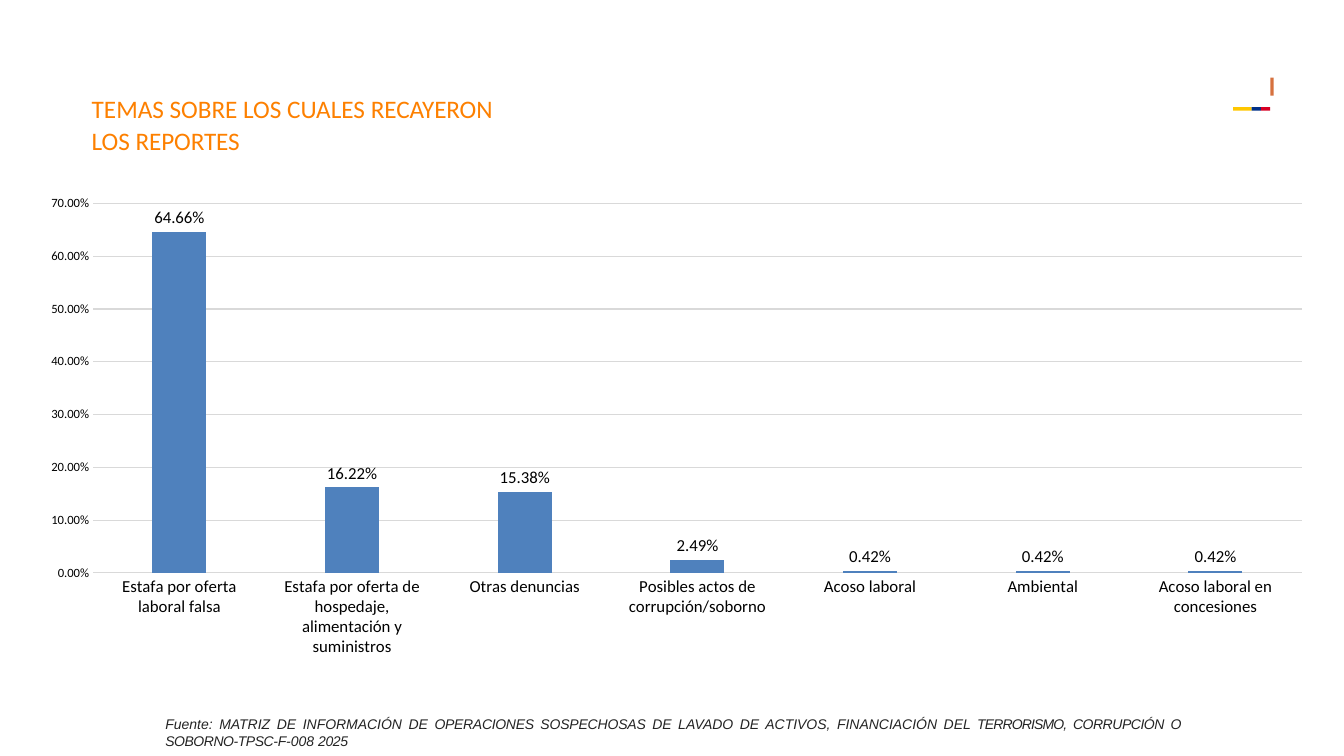
from pptx import Presentation
from pptx.chart.data import CategoryChartData
from pptx.dml.color import RGBColor
from pptx.enum.chart import XL_CHART_TYPE as ChartType, XL_LABEL_POSITION as LabelPos, XL_TICK_MARK as Tick
from pptx.enum.shapes import MSO_SHAPE as Shape
from pptx.enum.text import MSO_AUTO_SIZE as AutoSize, PP_ALIGN as Align
from pptx.util import Inches, Pt

COLORS = {
    "heading": "FD8000", "source": "242424", "text": "000000",
    "bar": "4F81BD", "grid": "D9D9D9", "accent": "D6713E",
    "yellow": "FFC700", "blue": "003088", "red": "D70024",
}


class ReportSlide:
    """Draws on one slide; places and sizes are percentages of the slide."""

    def __init__(self, deck, font="Calibri"):
        self.deck = deck
        self.font = font
        self.slide = deck.slides.add_slide(deck.slide_layouts[6])

    def area(self, left, top, width, height):
        across, down = self.deck.slide_width, self.deck.slide_height
        return [round(share * full / 100) for share, full in
                ((left, across), (top, down), (width, across), (height, down))]

    def color(self, name):
        return RGBColor.from_string(COLORS[name])

    def style(self, font, size, color="text", name=None, italic=None):
        font.name = name or self.font
        font.size = Pt(size)
        font.color.rgb = self.color(color)
        font.italic = italic

    def bar(self, place, color):
        mark = self.slide.shapes.add_shape(Shape.RECTANGLE, *self.area(*place))
        mark.shadow.inherit = False
        mark.fill.solid()
        mark.fill.fore_color.rgb = self.color(color)
        mark.line.fill.background()

    def text(self, place, pieces, align=Align.LEFT, **look):
        """pieces: (wording, letter spacing in hundredths of a point)."""
        frame = self.slide.shapes.add_textbox(*self.area(*place)).text_frame
        frame.word_wrap = True
        frame.auto_size = AutoSize.SHAPE_TO_FIT_TEXT
        frame.margin_left = frame.margin_top = Inches(0.01)
        frame.margin_right = frame.margin_bottom = 0
        line = frame.paragraphs[0]
        line.alignment = align
        for wording, spacing in pieces:
            run = line.add_run()
            run.text = wording
            self.style(run.font, **look)
            if spacing:
                run.font._element.set("spc", str(spacing))

    def column_chart(self, place, shares, number_format="0.00%"):
        data = CategoryChartData(number_format=number_format)
        data.categories = list(shares)
        data.add_series("Series 1", list(shares.values()))
        chart = self.slide.shapes.add_chart(
            ChartType.COLUMN_CLUSTERED, *self.area(*place), data).chart
        chart.has_legend = chart.has_title = False
        self.style(chart.font, 10)

        topics, scale = chart.category_axis, chart.value_axis
        for axis, size in ((topics, 12), (scale, 9)):
            axis.major_tick_mark = axis.minor_tick_mark = Tick.NONE
            self.style(axis.tick_labels.font, size)
        scale.minimum_scale, scale.maximum_scale, scale.major_unit = 0, 0.7, 0.1
        scale.tick_labels.number_format = number_format
        scale.tick_labels.number_format_is_linked = False
        scale.format.line.fill.background()
        for rule in (topics.format.line, scale.major_gridlines.format.line):
            rule.color.rgb = self.color("grid")
            rule.width = Pt(0.75)

        plot = chart.plots[0]
        plot.gap_width, plot.overlap = 219, -27
        plot.vary_by_categories = False
        fill = plot.series[0].format.fill
        fill.solid()
        fill.fore_color.rgb = self.color("bar")
        plot.has_data_labels = True
        labels = plot.data_labels
        labels.show_value = True
        labels.position = LabelPos.OUTSIDE_END
        labels.number_format = number_format
        labels.number_format_is_linked = False
        self.style(labels.font, 12)


def main():
    deck = Presentation()
    deck.slide_width, deck.slide_height = Inches(13.33), Inches(7.5)
    report = ReportSlide(deck)

    # Corner marks: upright accent and three-colour stripe
    report.bar((94.52, 10.27, 0.24, 2.4), "accent")
    stripe_left, stripe_unit = 91.75, 0.69
    for color, units in (("yellow", 2), ("blue", 1), ("red", 1)):
        report.bar((stripe_left, 14.18, units * stripe_unit, 0.46), color)
        stripe_left += units * stripe_unit

    # Source note
    report.text((12.23, 94.53, 75.62, 4.8), [
        ("Fuente: MATRIZ DE INFORMACIÓN DE ", 0), ("OPERACIONES ", -20),
        ("SOSPECHOSAS ", -10), ("DE LAVADO DE ACTIVOS, FINANCIACIÓN DEL ", 0),
        ("TERRORISMO, ", -60), ("CORRUPCIÓN ", -30), ("O ", -50),
        ("SOBORNO-TPSC-", -30), ("F-", -10), ("008 ", 0), ("2025", -20),
    ], align=Align.JUSTIFY, size=10, color="source", name="Arial", italic=True)

    # Heading in two lines
    heading = {"size": 18, "color": "heading"}
    report.text((6.75, 12.27, 30.08, 4.4),
                [("TEMAS SOBRE LOS CUALES ", 0), ("RECAYERON", -10)], **heading)
    report.text((6.75, 16.4, 11.25, 4.4),
                [("LOS ", 0), ("REPORTES", -10)], **heading)

    # Share of reports by topic
    report.column_chart((1.88, 24.67, 96.92, 63.47), {
        "Estafa por oferta laboral falsa": 0.6466,
        "Estafa por oferta de hospedaje, alimentación y suministros": 0.1622,
        "Otras denuncias": 0.1538,
        "Posibles actos de corrupción/soborno": 0.0249,
        "Acoso laboral": 0.0042,
        "Ambiental": 0.0042,
        "Acoso laboral en concesiones": 0.0042,
    })

    deck.save("out.pptx")


if __name__ == "__main__":
    main()
